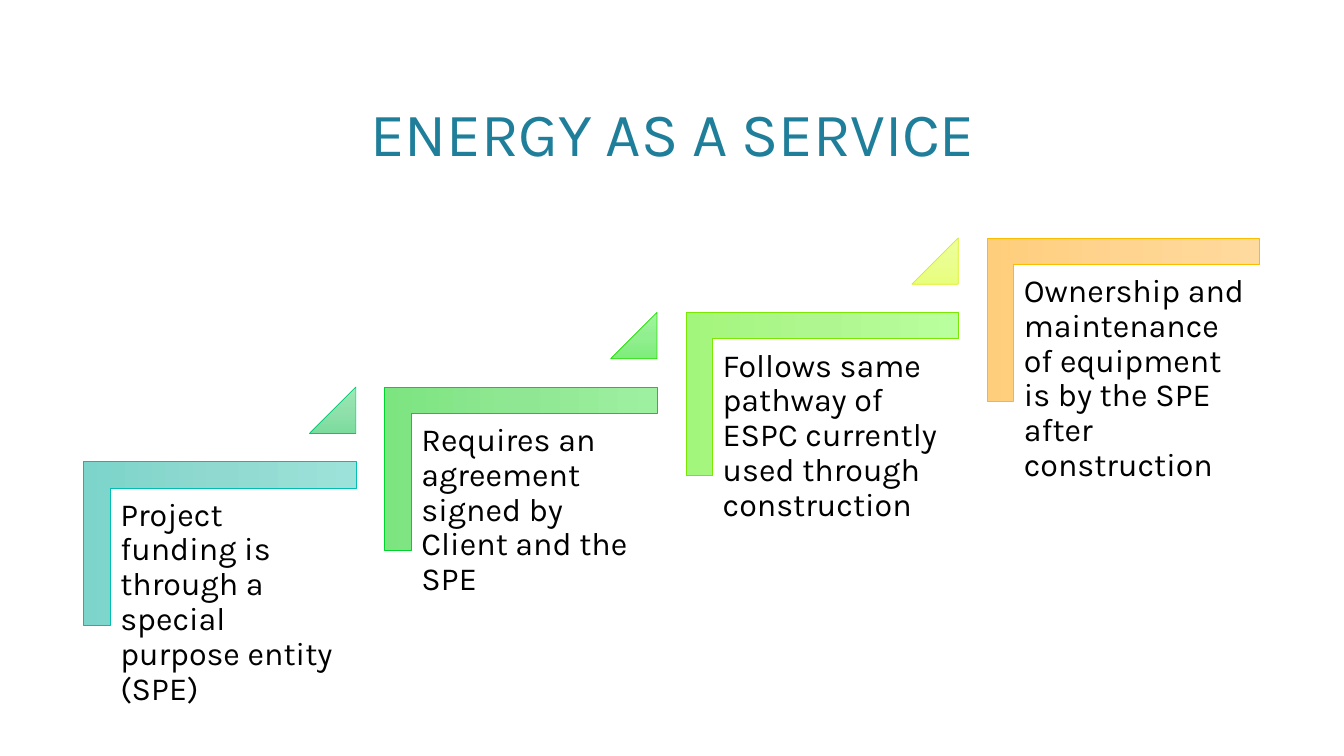
import copy

import pptx
import pptx.dml.color
import pptx.enum.shapes
import pptx.enum.text
import pptx.util

RGBColor = pptx.dml.color.RGBColor
Inches = pptx.util.Inches
Pt = pptx.util.Pt
MSO_SHAPE = pptx.enum.shapes.MSO_SHAPE

FONT = "Karla"
TITLE_COLOR = RGBColor(0x1F, 0x7F, 0x9A)
BLACK = RGBColor(0x00, 0x00, 0x00)

# Gradient stops from top to bottom, then the outline
TEAL = (RGBColor(0x9D, 0xE2, 0xDA), RGBColor(0x90, 0xD9, 0xD0),
        RGBColor(0x7C, 0xD4, 0xCA), RGBColor(0x00, 0xBF, 0xB2))
SEA_GREEN = (RGBColor(0x9D, 0xE9, 0xB6), RGBColor(0x90, 0xE0, 0xAB),
             RGBColor(0x7C, 0xDC, 0x9E), RGBColor(0x00, 0xC9, 0x72))
GREEN = (RGBColor(0x9D, 0xF0, 0xA0), RGBColor(0x90, 0xE7, 0x93),
         RGBColor(0x7C, 0xE5, 0x80), RGBColor(0x00, 0xD3, 0x2B))
BRIGHT_GREEN = (RGBColor(0x9F, 0xF7, 0x9D), RGBColor(0x92, 0xEF, 0x90),
                RGBColor(0x7F, 0xED, 0x7C), RGBColor(0x24, 0xDE, 0x00))
LIME = (RGBColor(0xBA, 0xFF, 0x9D), RGBColor(0xAF, 0xF6, 0x90),
        RGBColor(0xA3, 0xF6, 0x7C), RGBColor(0x7A, 0xE8, 0x00))
YELLOW = (RGBColor(0xED, 0xFF, 0x9E), RGBColor(0xEA, 0xFE, 0x90),
          RGBColor(0xE8, 0xFE, 0x7C), RGBColor(0xD7, 0xF2, 0x00))
ORANGE = (RGBColor(0xFF, 0xDA, 0x9E), RGBColor(0xFF, 0xD4, 0x90),
          RGBColor(0xFF, 0xCE, 0x7C), RGBColor(0xFC, 0xBC, 0x00))

# Each step: text, bracket palette, palette of the triangle leading upwards
STEPS = [
    ("Project funding is through a special purpose entity (SPE)", TEAL, SEA_GREEN),
    ("Requires an agreement signed by Client and the SPE", GREEN, BRIGHT_GREEN),
    ("Follows same pathway of ESPC currently used through construction", LIME, YELLOW),
    ("Ownership and maintenance of equipment is by the SPE after construction", ORANGE, None),
]

# Staircase grid, in inches
FIRST_LEFT, FIRST_TOP = 0.83, 4.58
COLUMN, ROW = 2.987, 0.74
BRACKET_WIDTH, BRACKET_HEIGHT = 2.7, 1.62
BAR = 0.265
TEXT_HEIGHT = 2.14
TRIANGLE = 0.46


def paint(shape, palette):
    """Give the shape a three-stop vertical gradient and a thin outline."""
    *stop_colors, line_color = palette
    shape.shadow.inherit = False
    shape.fill.gradient()
    shape.fill.gradient_angle = 270
    stop_list = shape._element.spPr.find(".//" + pptx.oxml.ns.qn("a:gsLst"))
    stop_list.append(copy.deepcopy(stop_list[-1]))
    for stop, color, position in zip(shape.fill.gradient_stops, stop_colors, (0, 0.5, 1)):
        stop.color.rgb = color
        stop.position = position
    shape.line.color.rgb = line_color
    shape.line.width = Pt(0.5)


def add_bracket(slide, left, top, palette):
    """Add a corner shape, turned so that its angle is at the upper left."""
    inset = (BRACKET_WIDTH - BRACKET_HEIGHT) / 2
    bracket = slide.shapes.add_shape(
        MSO_SHAPE.CORNER, Inches(left + inset), Inches(top - inset),
        Inches(BRACKET_HEIGHT), Inches(BRACKET_WIDTH))
    bracket.rotation = 90
    bracket.adjustments[0] = bracket.adjustments[1] = 0.161
    paint(bracket, palette)


def add_triangle(slide, left, top, palette):
    triangle = slide.shapes.add_shape(
        MSO_SHAPE.ISOSCELES_TRIANGLE, Inches(left), Inches(top),
        Inches(TRIANGLE), Inches(TRIANGLE))
    triangle.adjustments[0] = 1
    paint(triangle, palette)


def add_text(slide, left, top, width, height, text, size, color, margin):
    box = slide.shapes.add_textbox(Inches(left), Inches(top), Inches(width), Inches(height))
    frame = box.text_frame
    frame.word_wrap = True
    frame.margin_left = frame.margin_right = Inches(margin)
    frame.margin_top = frame.margin_bottom = Inches(margin)
    paragraph = frame.paragraphs[0]
    paragraph.text = text
    paragraph.font.name = FONT
    paragraph.font.size = Pt(size)
    paragraph.font.color.rgb = color
    return frame


def add_title(slide, text):
    frame = add_text(slide, 1.34, 0.91, 10.66, 0.8, text, 44, TITLE_COLOR, 0)
    frame.vertical_anchor = pptx.enum.text.MSO_ANCHOR.MIDDLE
    paragraph = frame.paragraphs[0]
    paragraph.alignment = pptx.enum.text.PP_ALIGN.CENTER
    paragraph.runs[0].font._element.set("spc", "-20")


def add_step(slide, index, text, bracket_palette, triangle_palette):
    left = FIRST_LEFT + index * COLUMN
    top = FIRST_TOP - index * ROW
    add_bracket(slide, left, top, bracket_palette)
    frame = add_text(slide, left + BAR, top + BAR, BRACKET_WIDTH - BAR, TEXT_HEIGHT,
                     text, 23, BLACK, 0.1)
    frame.paragraphs[0].line_spacing = 0.9
    if triangle_palette:
        add_triangle(slide, left + BRACKET_WIDTH - TRIANGLE, top - ROW, triangle_palette)


def main():
    presentation = pptx.Presentation()
    presentation.slide_width = Inches(13.33)
    presentation.slide_height = Inches(7.5)
    slide = presentation.slides.add_slide(presentation.slide_layouts[6])
    add_title(slide, "ENERGY AS A SERVICE")
    for index, step in enumerate(STEPS):
        add_step(slide, index, *step)
    presentation.save("out.pptx")


if __name__ == "__main__":
    main()
